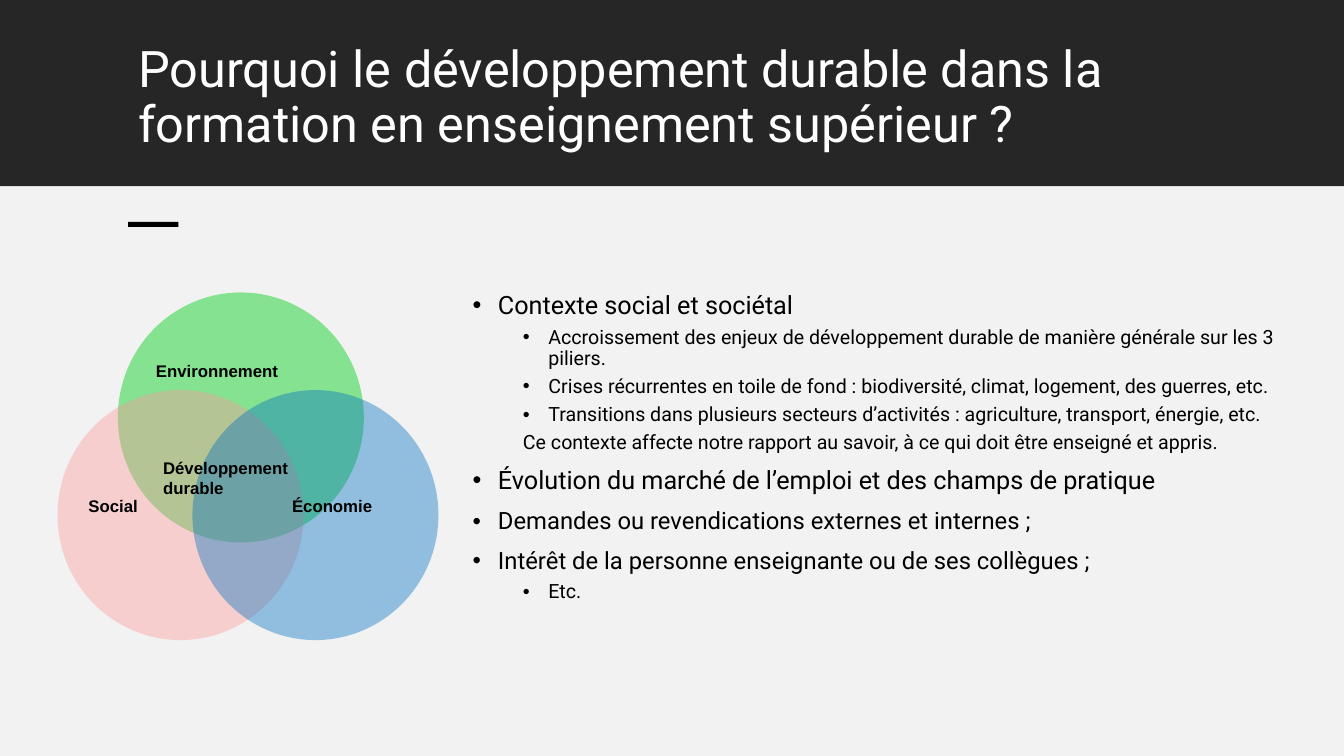
from lxml import etree
from pptx import Presentation
from pptx.dml.color import RGBColor
from pptx.enum.shapes import MSO_SHAPE
from pptx.enum.text import MSO_ANCHOR, MSO_AUTO_SIZE, PP_ALIGN
from pptx.oxml.ns import qn
from pptx.util import Cm, Pt

RECTANGLE, OVAL = MSO_SHAPE.RECTANGLE, MSO_SHAPE.OVAL
TOP, LEFT = MSO_ANCHOR.TOP, PP_ALIGN.LEFT
FIXED, GROW = MSO_AUTO_SIZE.NONE, MSO_AUTO_SIZE.SHAPE_TO_FIT_TEXT

BLACK = RGBColor(0x00, 0x00, 0x00)
WHITE = RGBColor(0xFF, 0xFF, 0xFF)
CHARCOAL = RGBColor(0x26, 0x26, 0x26)
PALE_GREY = RGBColor(0xF2, 0xF2, 0xF2)
GREEN = RGBColor(0x84, 0xE2, 0x91)
PINK = RGBColor(0xFF, 0x99, 0x99)
BLUE = RGBColor(0x00, 0x70, 0xC0)

WIDTH, HEIGHT, BAND_HEIGHT = 33.87, 19.05, 4.7
CIRCLE_SIZE = (6.2, 6.3)
INDENT_STEP = 1.27
HANGING = 0.64

TITLE = "Pourquoi le développement durable dans la formation en enseignement supérieur ?"

PILLARS = [
    (2.97, 7.37, GREEN, None),
    (1.45, 9.83, PINK, 40),
    (4.85, 9.83, BLUE, 40),
]

LABELS = [
    ("Environnement", (3.68, 8.97, 4.37, 0.76)),
    ("Social", (1.98, 12.37, 4.37, 0.76)),
    ("Économie", (7.11, 12.37, 4.37, 0.76)),
    ("Développement durable", (3.86, 11.4, 4.8, 1.27)),
]

REASONS = [
    (0, 18, True, "Contexte social et sociétal"),
    (1, 14, True, "Accroissement des enjeux de développement durable de manière générale sur les 3 piliers."),
    (1, 14, True, "Crises récurrentes en toile de fond : biodiversité, climat, logement, des guerres, etc."),
    (1, 14, True, "Transitions dans plusieurs secteurs d’activités : agriculture, transport, énergie, etc."),
    (1, 14, False, "Ce contexte affecte notre rapport au savoir, à ce qui doit être enseigné et appris."),
    (0, 18, True, "Évolution du marché de l’emploi et des champs de pratique"),
    (0, 17, True, "Demandes ou revendications externes et internes ;"),
    (0, 17, True, "Intérêt de la personne enseignante ou de ses collègues ;"),
    (1, 14, True, "Etc."),
]


def apply(target, values):
    for name, value in values.items():
        setattr(target, name, value)


class SlideBuilder:
    body_font = "Roboto"
    label_font = "Arial"

    def __init__(self, deck):
        self.page = deck.slides.add_slide(deck.slide_layouts[5])

    def shape(self, kind, place, color, opacity=None):
        shape = self.page.shapes.add_shape(kind, *map(Cm, place))
        shape.shadow.inherit = False
        shape.fill.solid()
        shape.fill.fore_color.rgb = color
        shape.line.fill.background()
        if opacity is not None:
            color_node = shape._element.spPr.find(qn("a:solidFill"))[0]
            etree.SubElement(color_node, qn("a:alpha"), val=str(opacity * 1000))

    def add_span(self, para, text, color=BLACK, **font):
        span = para.add_run()
        span.text = text
        span.font.color.rgb = color
        apply(span.font, font)

    def title(self, text, place):
        box = self.page.shapes.title
        box._element.getparent().append(box._element)
        apply(box, dict(zip(("left", "top", "width", "height"), map(Cm, place))))
        frame = box.text_frame
        apply(frame, {"word_wrap": True, "auto_size": FIXED, "vertical_anchor": TOP})
        para = frame.paragraphs[0]
        apply(para, {"alignment": LEFT, "line_spacing": 0.9})
        self.add_span(para, text, WHITE, name=self.body_font, size=Pt(36))

    def text_box(self, place, auto_size):
        frame = self.page.shapes.add_textbox(*map(Cm, place)).text_frame
        apply(frame, {"word_wrap": True, "auto_size": auto_size, "vertical_anchor": TOP})
        return frame

    def label(self, text, place):
        para = self.text_box(place, GROW).paragraphs[0]
        self.add_span(para, text, name=self.label_font, size=Pt(12), bold=True)

    def indent(self, para, level, bulleted):
        hanging = HANGING if bulleted else 0
        properties = para._p.get_or_add_pPr()
        properties.set("marL", str(Cm(level * INDENT_STEP + hanging)))
        properties.set("indent", str(-Cm(hanging)))
        if bulleted:
            etree.SubElement(properties, qn("a:buFont"), typeface="Arial")
            etree.SubElement(properties, qn("a:buChar"), char="•")
        else:
            etree.SubElement(properties, qn("a:buNone"))

    def outline(self, items, place):
        frame = self.text_box(place, FIXED)
        for number, (level, size, bulleted, text) in enumerate(items):
            para = frame.add_paragraph() if number else frame.paragraphs[0]
            self.indent(para, level, bulleted)
            apply(para, {"level": level, "line_spacing": 0.9})
            if number:
                para.space_before = Pt(5 if level else 10)
            self.add_span(para, text, name=self.body_font, size=Pt(size))


def main():
    deck = Presentation()
    apply(deck, {"slide_width": Cm(WIDTH), "slide_height": Cm(HEIGHT)})
    builder = SlideBuilder(deck)
    builder.shape(RECTANGLE, (0, 0, WIDTH, BAND_HEIGHT), CHARCOAL)
    builder.title(TITLE, (3.23, 0.99, 27.46, 2.49))
    builder.shape(RECTANGLE, (0, BAND_HEIGHT, WIDTH, HEIGHT - BAND_HEIGHT), PALE_GREY)
    builder.shape(RECTANGLE, (3.23, 5.59, 1.27, 0.13), BLACK)
    builder.outline(REASONS, (11.66, 7.26, 22.05, 11))
    for left, top, color, opacity in PILLARS:
        builder.shape(OVAL, (left, top, *CIRCLE_SIZE), color, opacity)
    for text, place in LABELS:
        builder.label(text, place)
    deck.save("out.pptx")


if __name__ == "__main__":
    main()
